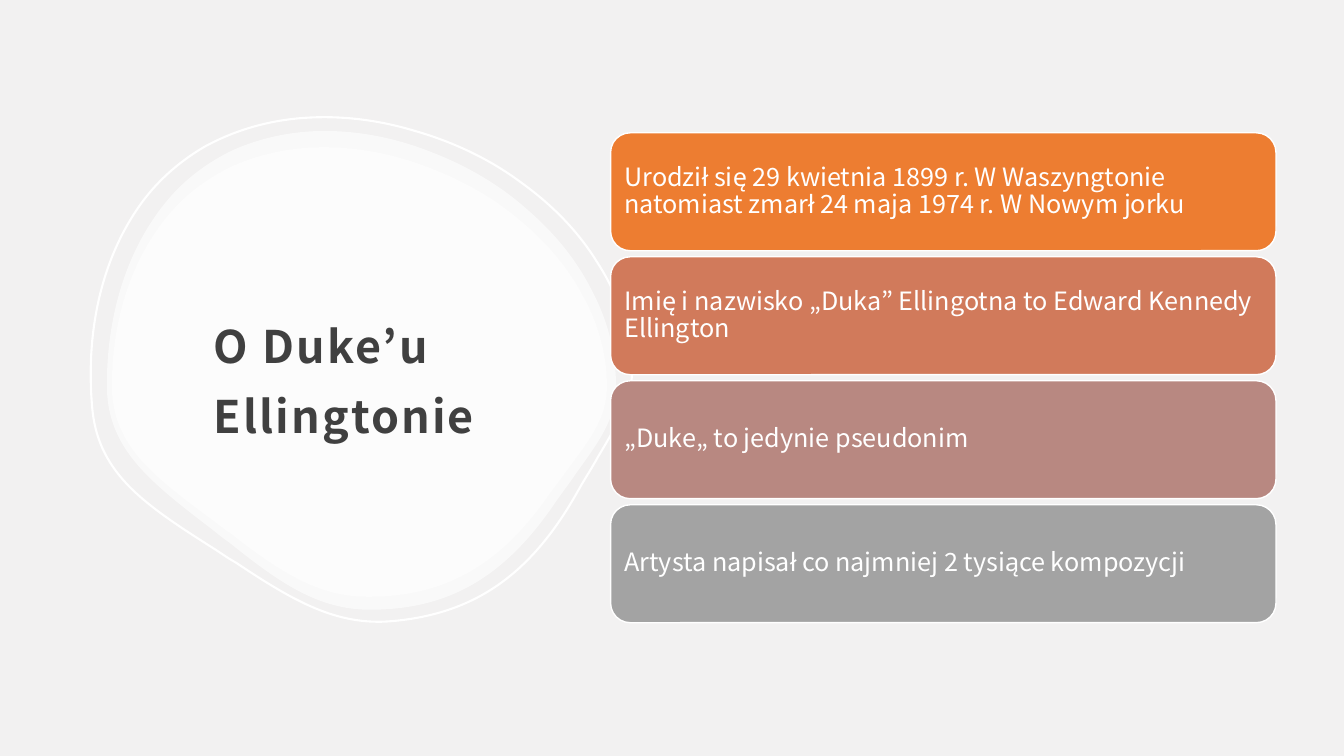
from dataclasses import dataclass

import pptx
import pptx.dml.color
import pptx.enum.shapes
import pptx.enum.text
import pptx.oxml
import pptx.oxml.ns
import pptx.util

COLOURS = {
    "background": "F2F1F1",
    "white": "FFFFFF",
    "title": "404040",
    "orange": "ED7D31",
    "terracotta": "D17A5B",
    "rose": "B88881",
    "grey": "A3A3A3",
}
FONT = "Noto Sans CJK JP"
WIDTH = pptx.util.Inches(13.33)
HEIGHT = pptx.util.Inches(7.5)


def across(percent: float) -> int:
    return round(WIDTH * percent / 100)


def down(percent: float) -> int:
    return round(HEIGHT * percent / 100)


def colour(name: str) -> pptx.dml.color.RGBColor:
    return pptx.dml.color.RGBColor.from_string(COLOURS[name])


@dataclass
class Pebble:
    """Frame in percent of the slide; an opacity of 0 draws the outline only."""
    left: float
    top: float
    width: float
    height: float
    opacity: int = 0
    rotation: float = 0


@dataclass
class Fact:
    text: str
    fill: str


# Pebble contour on a 505 by 475 grid: Bézier segments, each starting where the last ends
GRID_COLUMNS, GRID_ROWS = 505, 475
PEBBLE_START = (216, 0)
PEBBLE_CURVES = [
    ((183, 0), (152, 7), (125, 19)),
    ((100, 31), (77, 48), (59, 70)),
    ((21, 116), (0, 180), (0, 252)),
    ((0, 280), (8, 303), (26, 326)),
    ((45, 350), (74, 372), (104, 395)),
    ((109, 399), (115, 404), (121, 408)),
    ((172, 449), (210, 475), (261, 475)),
    ((339, 475), (395, 443), (446, 367)),
    ((453, 357), (460, 348), (466, 339)),
    ((492, 303), (505, 284), (505, 252)),
    ((505, 220), (497, 188), (481, 158)),
    ((466, 128), (444, 101), (416, 77)),
    ((389, 53), (356, 34), (322, 21)),
    ((287, 7), (251, 0), PEBBLE_START),
]

PEBBLES = [
    Pebble(7.95, 17.33, 37.88, 63.33, opacity=60),
    Pebble(8.33, 19.47, 36.83, 59.47, opacity=60),
    Pebble(6.68, 15.07, 40.29, 67.33, rotation=355),
]

FACTS = [
    Fact("Urodził się 29 kwietnia 1899 r. W Waszyngtonie natomiast zmarł "
         "24 maja 1974 r. W Nowym jorku", "orange"),
    Fact("Imię i nazwisko „Duka” Ellingotna to Edward Kennedy Ellington", "terracotta"),
    Fact("„Duke„ to jedynie pseudonim", "rose"),
    Fact("Artysta napisał co najmniej 2 tysiące kompozycji", "grey"),
]
FACT_LEFT, FACT_TOP = 45.43, 17.57
FACT_WIDTH, FACT_HEIGHT, FACT_PITCH = 49.51, 15.6, 16.4


def draw_pebble(slide, pebble: Pebble) -> None:
    scale = (across(pebble.width) / GRID_COLUMNS, down(pebble.height) / GRID_ROWS)
    builder = slide.shapes.build_freeform(*PEBBLE_START, scale=scale)
    builder.add_line_segments([curve[-1] for curve in PEBBLE_CURVES], close=True)
    shape = builder.convert_to_shape(across(pebble.left), down(pebble.top))
    shape.rotation = pebble.rotation
    shape.shadow.inherit = False

    # Bend each straight segment into its curve
    namespace = pptx.oxml.ns.nsdecls("a")
    segments = list(shape._element.iter(pptx.oxml.ns.qn("a:lnTo")))
    for segment, curve in zip(segments, PEBBLE_CURVES):
        points = "".join(f'<a:pt x="{x}" y="{y}"/>' for x, y in curve)
        segment.getparent().replace(segment, pptx.oxml.parse_xml(
            f"<a:cubicBezTo {namespace}>{points}</a:cubicBezTo>"))

    if pebble.opacity:
        shape.fill.solid()
        shape.fill.fore_color.rgb = colour("white")
        tint = shape.fill._xPr.find(".//" + pptx.oxml.ns.qn("a:srgbClr"))
        tint.append(pptx.oxml.parse_xml(
            f'<a:alpha {namespace} val="{pebble.opacity * 1000}"/>'))
        shape.line.fill.background()
    else:
        shape.fill.background()
        shape.line.color.rgb = colour("white")
        shape.line.width = pptx.util.Pt(1.5)


def write(frame, text: str, size: float, tint: str, spacing: float,
          margins: tuple[float, float, float, float]):
    """Fill a text frame with one left-aligned run and return the run."""
    frame.word_wrap = True
    frame.auto_size = pptx.enum.text.MSO_AUTO_SIZE.NONE
    frame.vertical_anchor = pptx.enum.text.MSO_ANCHOR.MIDDLE
    (frame.margin_left, frame.margin_top,
     frame.margin_right, frame.margin_bottom) = map(pptx.util.Inches, margins)
    paragraph = frame.paragraphs[0]
    paragraph.alignment = pptx.enum.text.PP_ALIGN.LEFT
    paragraph.line_spacing = spacing
    run = paragraph.add_run()
    run.text = text
    run.font.name = FONT
    run.font.size = pptx.util.Pt(size)
    run.font.color.rgb = colour(tint)
    return run


def draw_title(slide) -> None:
    title = slide.shapes.title
    title.left, title.top = across(15), down(27.73)
    title.width, title.height = across(27.16), down(42.8)
    run = write(title.text_frame, "O Duke’u Ellingtonie", 32, "title", 1.3,
                (0.12, 0.12, 0.12, 0.1))
    run.font.bold = True
    run.font._element.set("spc", "150")
    # Bring the title in front of the pebbles
    slide.shapes._spTree.append(title._element)


def draw_fact(slide, fact: Fact, row: int) -> None:
    card = slide.shapes.add_shape(
        pptx.enum.shapes.MSO_SHAPE.ROUNDED_RECTANGLE,
        across(FACT_LEFT), down(FACT_TOP + row * FACT_PITCH),
        across(FACT_WIDTH), down(FACT_HEIGHT))
    card.shadow.inherit = False
    card.fill.solid()
    card.fill.fore_color.rgb = colour(fact.fill)
    card.line.color.rgb = colour("white")
    card.line.width = pptx.util.Pt(1)
    write(card.text_frame, fact.text, 18, "white", 0.9, (0.08, 0.07, 0.07, 0.07))


def main() -> None:
    deck = pptx.Presentation()
    deck.slide_width, deck.slide_height = WIDTH, HEIGHT
    slide = deck.slides.add_slide(deck.slide_layouts.get_by_name("Title Only"))
    slide.background.fill.solid()
    slide.background.fill.fore_color.rgb = colour("background")

    # Pebbles behind the title
    for pebble in PEBBLES:
        draw_pebble(slide, pebble)
    draw_title(slide)

    # Column of facts
    for row, fact in enumerate(FACTS):
        draw_fact(slide, fact, row)

    deck.save("out.pptx")


if __name__ == "__main__":
    main()
